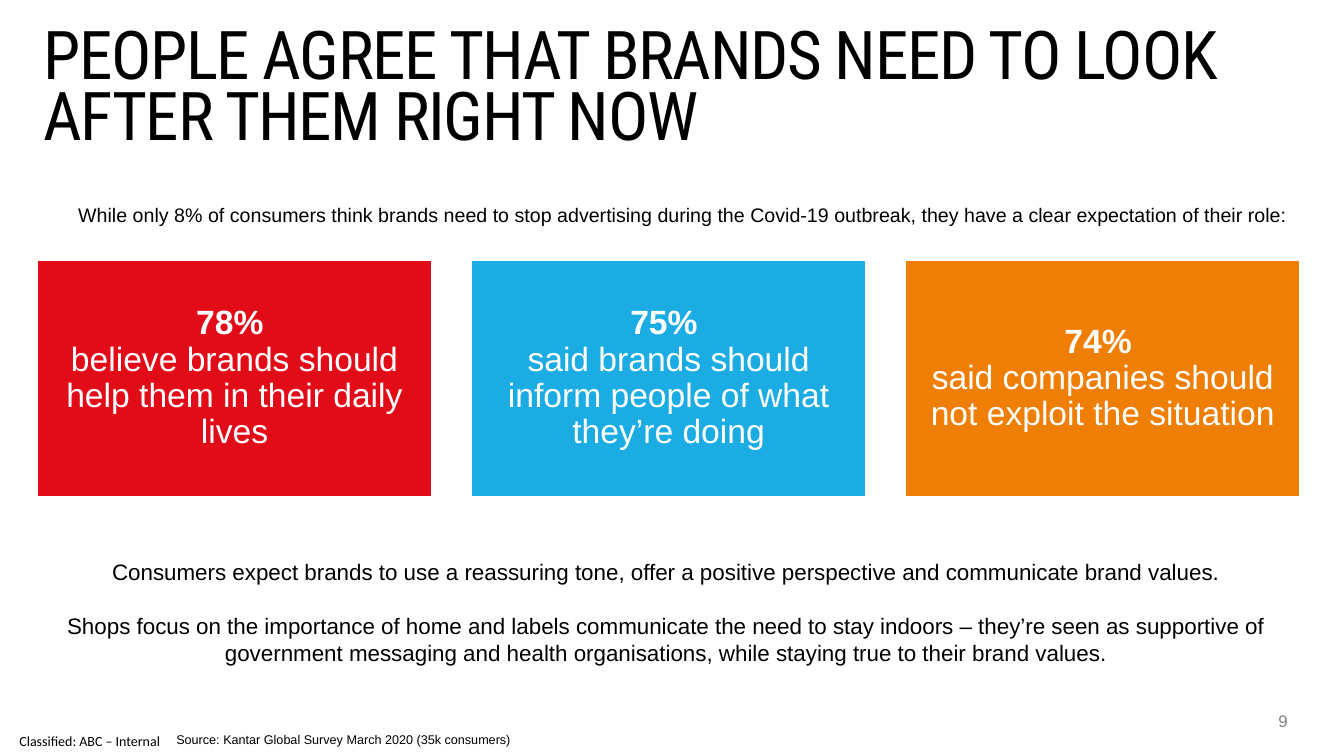
from pptx import Presentation
from pptx.dml.color import RGBColor
from pptx.enum import shapes, text
from pptx import util as u

COLORS = {"black": "000000", "grey": "808080", "white": "FFFFFF",
          "red": "E20C18", "blue": "1BACE4", "orange": "EF7E05"}
LEFT, CENTER, RIGHT = text.PP_ALIGN.LEFT, text.PP_ALIGN.CENTER, text.PP_ALIGN.RIGHT
TOP, MIDDLE = text.MSO_ANCHOR.TOP, text.MSO_ANCHOR.MIDDLE

prs = Presentation()
prs.slide_width, prs.slide_height = u.Inches(13.33), u.Inches(7.5)
s = prs.slides.add_slide(prs.slide_layouts[6])


def area(x, y, w, h):
    sizes = (prs.slide_width, prs.slide_height) * 2
    return [int(size * share / 100) for size, share in zip(sizes, (x, y, w, h))]


def add_run(p, words, color, **font):
    r = p.add_run()
    r.text = words
    for name, value in font.items():
        setattr(r.font, name, value)
    r.font.color.rgb = RGBColor.from_string(COLORS[color])
    return r


title = "PEOPLE AGREE THAT BRANDS NEED TO LOOK AFTER THEM RIGHT NOW"
intro = ("While only 8% of consumers think brands need to stop advertising during the "
         "Covid-19 outbreak, they have a clear expectation of their role:")
summary = [
    "Consumers expect brands to use a reassuring tone, offer a positive perspective "
    "and communicate brand values.",
    "Shops focus on the importance of home and labels communicate the need to stay indoors – "
    "they’re seen as supportive of government messaging and health organisations, "
    "while staying true to their brand values."]
source = "Source: Kantar Global Survey March 2020 (35k consumers)"

blocks = [
    ((0, 96.13, 13.35, 3.87), ["Classified: ABC – Internal"], "Calibri", 10, "black", CENTER, MIDDLE, 0),
    ((3.23, 4.13, 95.27, 4.53), [title], "Roboto Condensed", 48, "black", LEFT, TOP, 0),
    ((92.27, 94, 3.53, 2.67), ["9"], "Arial", 12, "grey", RIGHT, TOP, 0),
    ((1.65, 73.2, 95.8, 15.73), summary, "Arial", 16, "black", CENTER, TOP, 0.1),
    ((2.03, 26.13, 97.6, 4.53), [intro], "Arial", 14, "black", CENTER, TOP, 0.1),
    ((12.38, 96.13, 80, 3.33), [source], "Arial", 9, "black", LEFT, TOP, 0.1),
]
for box, paragraphs, face, size, color, align, anchor, inset in blocks:
    tf = s.shapes.add_textbox(*area(*box)).text_frame
    frame = {"word_wrap": True, "vertical_anchor": anchor,
             "margin_left": u.Inches(inset), "margin_right": u.Inches(inset),
             "margin_top": u.Inches(inset / 2), "margin_bottom": u.Inches(inset / 2)}
    for name, value in frame.items():
        setattr(tf, name, value)
    for i, words in enumerate(paragraphs):
        p = tf.add_paragraph() if i else tf.paragraphs[0]
        p.alignment = align
        if i:
            p.space_before = u.Pt(19)
        r = add_run(p, words, color, name=face, size=u.Pt(size))
        if words == title:
            p.line_spacing = u.Pt(44)
            r.font._element.set("spc", "-100")

cards = [
    ("red", "78% ", "believe brands should help them in their daily lives"),
    ("blue", "75% ", "said brands should inform people of what they’re doing"),
    ("orange", "74% ", "said companies should not exploit the situation"),
]
for col, (color, share, claim) in enumerate(cards):
    sp = s.shapes.add_shape(shapes.MSO_SHAPE.RECTANGLE,
                            *area(2.78 + col * 32.3, 34.4, 29.33, 31.33))
    sp.shadow.inherit = False
    sp.fill.solid()
    sp.fill.fore_color.rgb = RGBColor.from_string(COLORS[color])
    sp.line.color.rgb = RGBColor.from_string(COLORS["white"])
    sp.line.width = u.Pt(1)
    tf = sp.text_frame
    frame = {"word_wrap": True, "vertical_anchor": MIDDLE}
    frame.update({f"margin_{side}": u.Inches(0.1) for side in ("left", "top", "right", "bottom")})
    for name, value in frame.items():
        setattr(tf, name, value)
    p = tf.paragraphs[0]
    p.alignment, p.line_spacing = CENTER, 0.9
    font = {"name": "Arial", "size": u.Pt(24)}
    add_run(p, share, "white", bold=True, **font)
    p.add_line_break()
    add_run(p, claim, "white", bold=False, **font)

prs.save("out.pptx")
